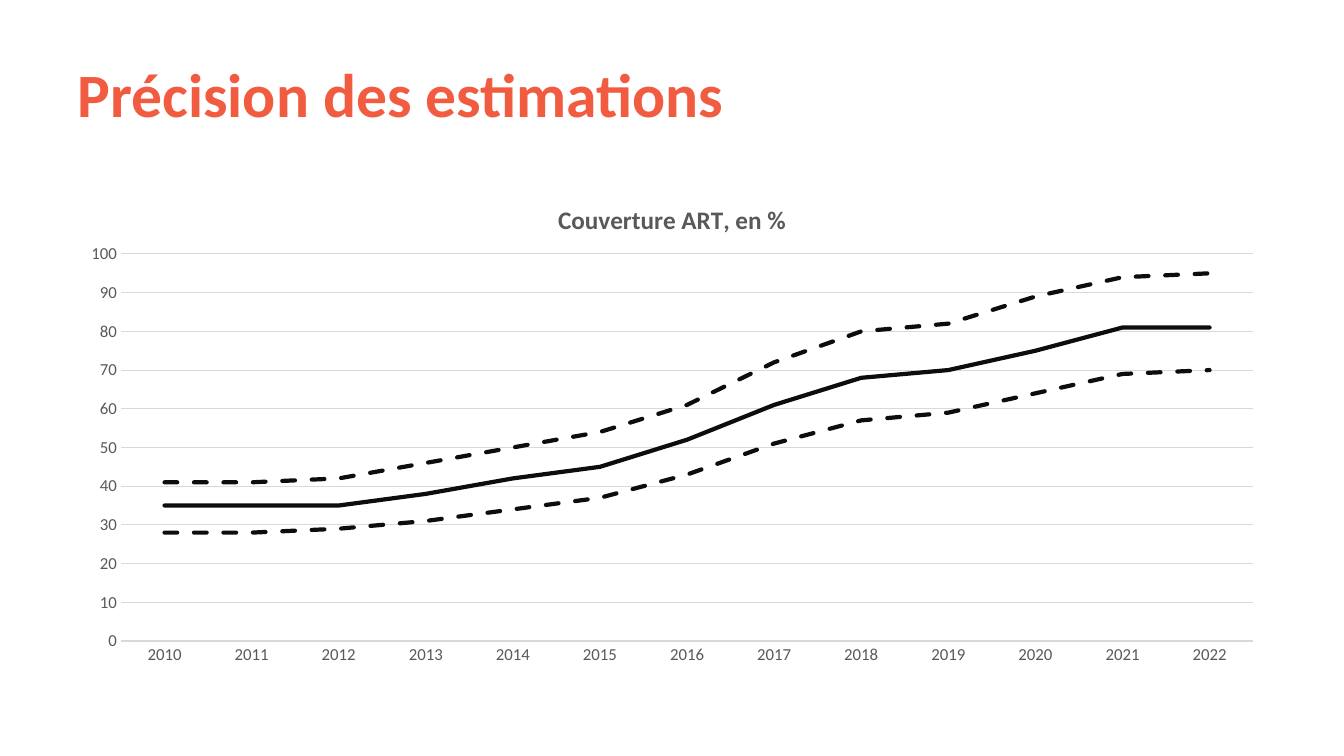
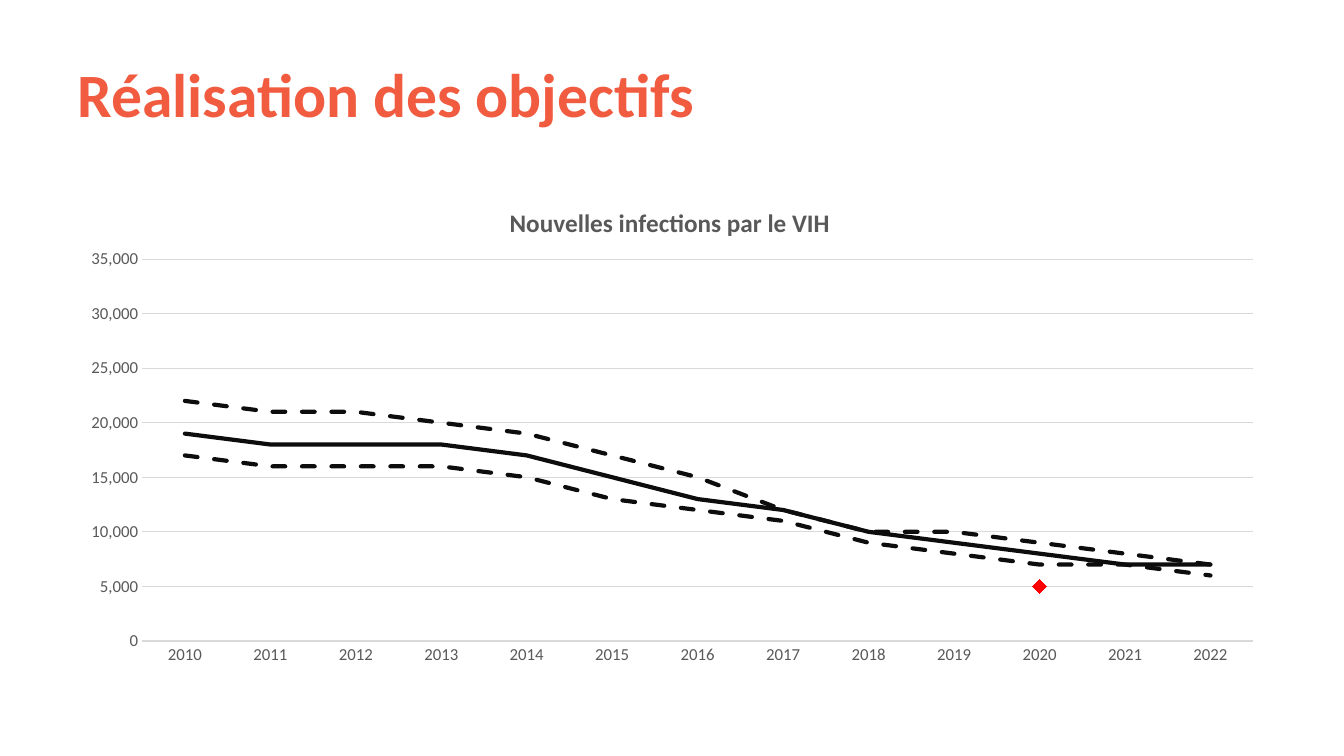
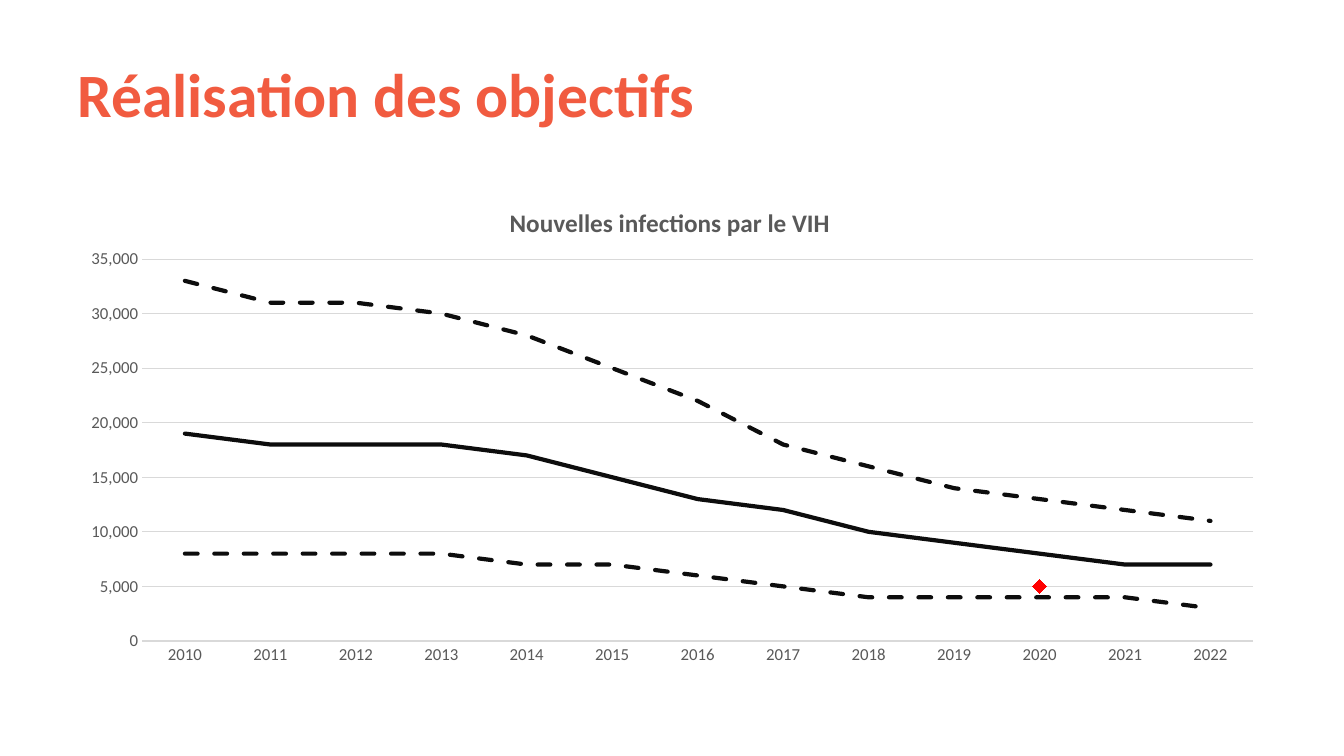
from lxml import etree
from pptx import Presentation
from pptx import util as u
from pptx.chart.data import CategoryChartData
from pptx.dml.color import RGBColor
from pptx.enum import chart as ch, dml, text
from pptx.oxml.ns import qn

COLORS = {"title": "F15B40", "gray": "595959", "grid": "D9D9D9",
          "line": "0D0D0D", "goal": "FF0000", "back": "FFFFFF"}
FONT = "Calibri"
TITLE_BOX = (0.67, 0.3, 12, 1.25)
CHART_BOX = (0.67, 1.75, 12, 4.95)
PLOT_END = (11.76, 4.61)  # right and bottom of the plot inside the chart box
YEARS = [str(year) for year in range(2010, 2023)]

BEST = [19000, 18000, 18000, 18000, 17000, 15000, 13000, 12000,
        10000, 9000, 8000, 7000, 7000]
GOAL = [5000 if year == "2020" else None for year in YEARS]
INFECTED = {"name": "Nouvelles infections par le VIH", "head": (4.34, 0.24),
            "plot": (0.74, 0.82), "top": 35000, "step": 5000}
COVERED = {"name": "Couverture ART, en %", "head": (4.82, 0.21),
           "plot": (0.53, 0.77), "top": 100, "step": 10}

SLIDES = [
    ("Précision des estimations", COVERED, [
        [35, 35, 35, 38, 42, 45, 52, 61, 68, 70, 75, 81, 81],
        [28, 28, 29, 31, 34, 37, 43, 51, 57, 59, 64, 69, 70],
        [41, 41, 42, 46, 50, 54, 61, 72, 80, 82, 89, 94, 95]]),
    ("Réalisation des objectifs", INFECTED, [
        BEST,
        [17000, 16000, 16000, 16000, 15000, 13000, 12000, 11000,
         9000, 8000, 7000, 7000, 6000],
        [22000, 21000, 21000, 20000, 19000, 17000, 15000, 12000,
         10000, 10000, 9000, 8000, 7000],
        GOAL]),
    ("Réalisation des objectifs", INFECTED, [
        BEST,
        [8000, 8000, 8000, 8000, 7000, 7000, 6000, 5000,
         4000, 4000, 4000, 4000, 3000],
        [33000, 31000, 31000, 30000, 28000, 25000, 22000, 18000,
         16000, 14000, 13000, 12000, 11000],
        GOAL]),
]


def rgb(name):
    return RGBColor.from_string(COLORS[name])


def style(font, size, color, bold=False):
    font.name, font.size, font.bold = FONT, u.Pt(size), bold
    font.color.rgb = rgb(color)


def write(frame, words, **form):
    para = frame.paragraphs[0]
    run = para.add_run()
    run.text = words
    style(run.font, **form)


def add_title(slide, box, words):
    frame = slide.shapes.add_textbox(*map(u.Inches, box)).text_frame
    frame.word_wrap = True
    frame.vertical_anchor = text.MSO_ANCHOR.MIDDLE
    write(frame, words, size=44, color="title", bold=True)


def arrange(node, after, **parts):
    """Give a chart part a manual layout, placed after the named child."""
    for old in node.findall(qn("c:layout")):
        node.remove(old)
    layout = etree.Element(qn("c:layout"))
    manual = etree.SubElement(layout, qn("c:manualLayout"))
    for tag, val in parts.items():
        etree.SubElement(manual, qn("c:" + tag)).set("val", str(val))
    if after:
        node.find(qn(after)).addnext(layout)
    else:
        node.insert(0, layout)


def style_axes(chart, top, step):
    for axis in (chart.category_axis, chart.value_axis):
        axis.major_tick_mark = axis.minor_tick_mark = ch.XL_TICK_MARK.NONE
        style(axis.tick_labels.font, 12, "gray")
    value = chart.value_axis
    value.minimum_scale, value.maximum_scale = 0, top
    value.major_unit = step
    value.tick_labels.number_format = "#,##0"
    value.tick_labels.number_format_is_linked = False
    value.format.line.fill.background()
    value.has_major_gridlines = True
    for part in (chart.category_axis, value.major_gridlines):
        part.format.line.color.rgb = rgb("grid")
        part.format.line.width = u.Pt(0.75)


def style_line(series, dashed):
    series.marker.style = ch.XL_MARKER_STYLE.NONE
    line = series.format.line
    line.color.rgb = rgb("line")
    line.width = u.Pt(3)
    if dashed:
        line.dash_style = dml.MSO_LINE.DASH
    series._element.find(qn("c:spPr")).find(qn("a:ln")).set("cap", "rnd")


def style_goal(series):
    series.format.line.fill.background()
    mark = series.marker
    mark.style, mark.size = ch.XL_MARKER_STYLE.DIAMOND, 10
    mark.format.fill.solid()
    mark.format.fill.fore_color.rgb = rgb("goal")
    mark.format.line.color.rgb = rgb("goal")


def add_trend(slide, box, rows, name, head, plot, top, step):
    data = CategoryChartData(number_format="#,##0")
    data.categories = YEARS
    for num, row in enumerate(rows, 1):
        data.add_series(f"Series {num}", row)
    chart = slide.shapes.add_chart(
        ch.XL_CHART_TYPE.LINE, *map(u.Inches, box), data).chart
    chart.font.name, chart.font.size = FONT, u.Pt(10)
    chart.has_legend = False
    chart.has_title = True
    write(chart.chart_title.text_frame, name, size=18, color="gray", bold=True)
    style_axes(chart, top, step)
    chart.plots[0].vary_by_categories = False
    for num, series in enumerate(chart.plots[0].series):
        series.smooth = False
        if rows[num] is GOAL:
            style_goal(series)
        else:
            style_line(series, dashed=num > 0)

    wide, high = box[2:]
    arrange(chart.chart_title._element, "c:tx", xMode="edge", yMode="edge",
            x=head[0] / wide, y=head[1] / high)
    area = chart._chartSpace.find(qn("c:chart")).find(qn("c:plotArea"))
    arrange(area, None, layoutTarget="inner", xMode="edge", yMode="edge",
            x=plot[0] / wide, y=plot[1] / high,
            w=(PLOT_END[0] - plot[0]) / wide, h=(PLOT_END[1] - plot[1]) / high)


def main():
    deck = Presentation()
    deck.slide_width, deck.slide_height = u.Inches(13.33), u.Inches(7.5)
    for title, kind, rows in SLIDES:
        slide = deck.slides.add_slide(deck.slide_layouts[6])
        slide.background.fill.solid()
        slide.background.fill.fore_color.rgb = rgb("back")
        add_title(slide, TITLE_BOX, title)
        add_trend(slide, CHART_BOX, rows, **kind)
    deck.save("out.pptx")


if __name__ == "__main__":
    main()
